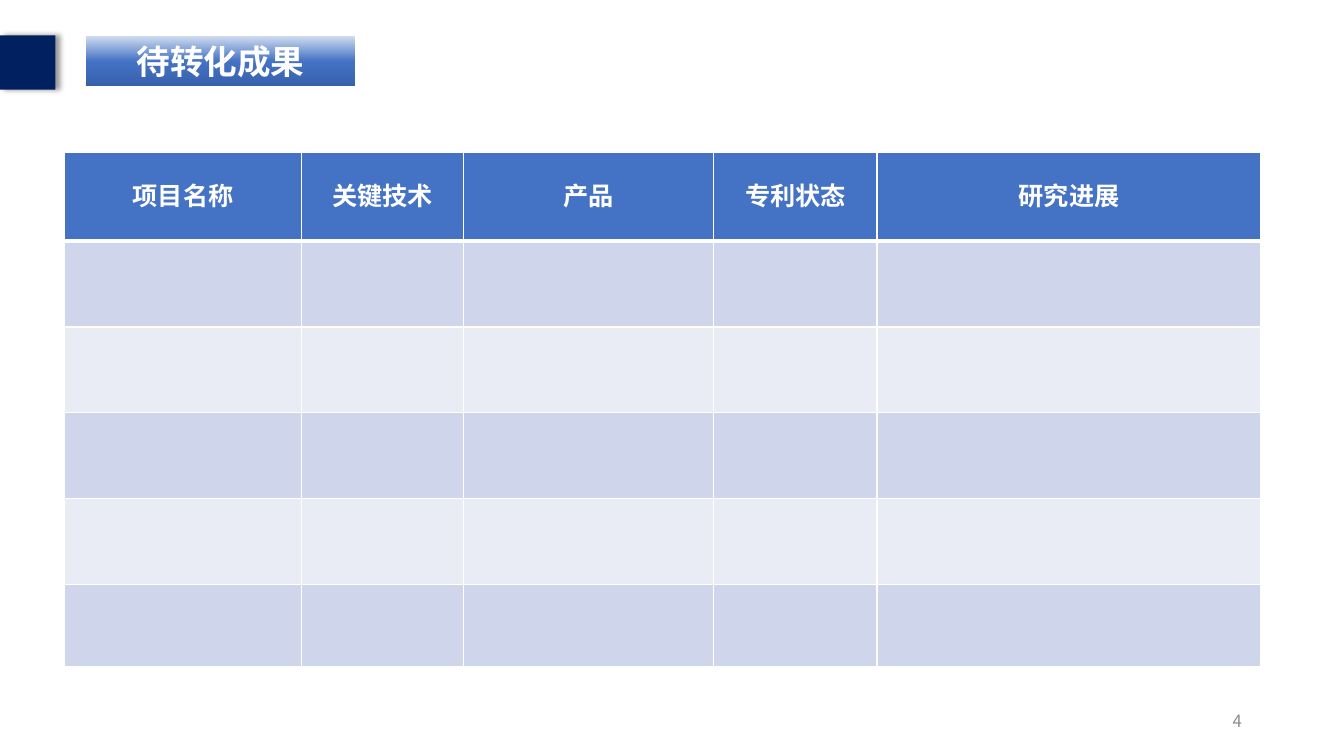
from copy import deepcopy

from lxml import etree
from pptx import Presentation
from pptx.dml.color import RGBColor
from pptx.enum.shapes import MSO_SHAPE
from pptx.enum.text import MSO_ANCHOR, PP_ALIGN
from pptx.oxml import parse_xml
from pptx.oxml.ns import nsdecls, qn
from pptx.util import Cm, Pt

RECTANGLE = MSO_SHAPE.RECTANGLE
MIDDLE = MSO_ANCHOR.MIDDLE
CENTER, RIGHT = PP_ALIGN.CENTER, PP_ALIGN.RIGHT

FONT = "Noto Sans CJK SC"
WHITE = RGBColor(0xFF, 0xFF, 0xFF)
NAVY = RGBColor(0x00, 0x20, 0x60)
BLUE = RGBColor(0x44, 0x72, 0xC4)
PALE_BLUE = RGBColor(0xD0, 0xDC, 0xF0)
DEEP_BLUE = RGBColor(0x36, 0x60, 0xAB)
DARK_BAND = RGBColor(0xCF, 0xD5, 0xEA)
LIGHT_BAND = RGBColor(0xE9, 0xEB, 0xF5)
GRAY = RGBColor(0x8C, 0x8C, 0x8C)

HEADINGS = ["项目名称", "关键技术", "产品", "专利状态", "研究进展"]
COLUMN_WIDTHS = [5.97, 4.09, 6.3, 4.11, 9.68]
ROW_HEIGHTS = [2.24] + [2.16] * 4 + [2.08]


def write_text(frame, text, size=18, color=WHITE, bold=False, align=CENTER):
    frame.word_wrap = True
    frame.vertical_anchor = MIDDLE
    paragraph = frame.paragraphs[0]
    paragraph.alignment = align
    run = paragraph.add_run()
    run.text = text
    run.font.size = Pt(size)
    run.font.bold = bold
    run.font.color.rgb = color
    run.font.name = FONT
    east_asian = etree.SubElement(run.font._element, qn("a:ea"))
    east_asian.set("typeface", FONT)


class SlideBuilder:
    def __init__(self, slide):
        self.slide = slide

    def rectangle(self, left, top, width, height):
        shape = self.slide.shapes.add_shape(
            RECTANGLE, Cm(left), Cm(top), Cm(width), Cm(height))
        shape.shadow.inherit = False
        shape.line.fill.background()
        return shape

    def shadowed_square(self, left, top, width, height, color):
        shape = self.rectangle(left, top, width, height)
        shape.fill.solid()
        shape.fill.fore_color.rgb = color
        effects = shape._element.spPr.find(qn("a:effectLst"))
        effects.append(parse_xml(
            f'<a:outerShdw {nsdecls("a")} blurRad="{Pt(4)}" dist="{Pt(3)}" dir="0" '
            'algn="l" rotWithShape="0"><a:srgbClr val="000000">'
            '<a:alpha val="40000"/></a:srgbClr></a:outerShdw>'))

    def title(self, text, left, top, width, height, colors):
        shape = self.rectangle(left, top, width, height)
        fill = shape.fill
        fill.gradient()
        fill.gradient_angle = 270
        stop_list = shape._element.spPr.find(".//" + qn("a:gsLst"))
        stop_list.append(deepcopy(stop_list[0]))
        for index, (stop, color) in enumerate(zip(fill.gradient_stops, colors)):
            stop.position = index / (len(colors) - 1)
            stop.color.rgb = color
        write_text(shape.text_frame, text, size=24, bold=True)

    def text(self, text, left, top, width, height, **text_format):
        box = self.slide.shapes.add_textbox(
            Cm(left), Cm(top), Cm(width), Cm(height))
        write_text(box.text_frame, text, **text_format)

    def borders(self, cell, bottom_width):
        properties = cell._tc.get_or_add_tcPr()
        for side, width in zip("LRTB", (1, 1, 1, bottom_width)):
            properties.append(parse_xml(
                f'<a:ln{side} {nsdecls("a")} w="{Pt(width)}"><a:solidFill>'
                f'<a:srgbClr val="{WHITE}"/></a:solidFill></a:ln{side}>'))

    def table(self, left, top, headings, widths, heights):
        table = self.slide.shapes.add_table(
            len(heights), len(widths), Cm(left), Cm(top),
            Cm(sum(widths)), Cm(sum(heights))).table
        for column, width in zip(table.columns, widths):
            column.width = Cm(width)
        for index, (row, height) in enumerate(zip(table.rows, heights)):
            row.height = Cm(height)
            band = DARK_BAND if index % 2 else LIGHT_BAND
            for cell in row.cells:
                self.borders(cell, bottom_width=1 if index else 3)
                cell.fill.solid()
                cell.fill.fore_color.rgb = band if index else BLUE
        for cell, heading in zip(table.rows[0].cells, headings):
            cell.margin_left = cell.margin_right = cell.margin_top = Cm(0.03)
            cell.margin_bottom = Cm(0.13)
            cell.vertical_anchor = MIDDLE
            write_text(cell.text_frame, heading, bold=True)


def main():
    presentation = Presentation()
    presentation.slide_width = Cm(33.87)
    presentation.slide_height = Cm(19.05)
    slide = presentation.slides.add_slide(presentation.slide_layouts[6])
    builder = SlideBuilder(slide)

    # Header and page number
    builder.shadowed_square(0, 0.89, 1.4, 1.37, NAVY)
    builder.text("4", 23.93, 17.65, 7.62, 1.02, size=12, color=GRAY, align=RIGHT)
    builder.title("待转化成果", 2.18, 0.91, 6.76, 1.27,
                  [PALE_BLUE, BLUE, DEEP_BLUE])

    # Results table
    builder.table(1.63, 3.84, HEADINGS, COLUMN_WIDTHS, ROW_HEIGHTS)

    presentation.save("out.pptx")


if __name__ == "__main__":
    main()
